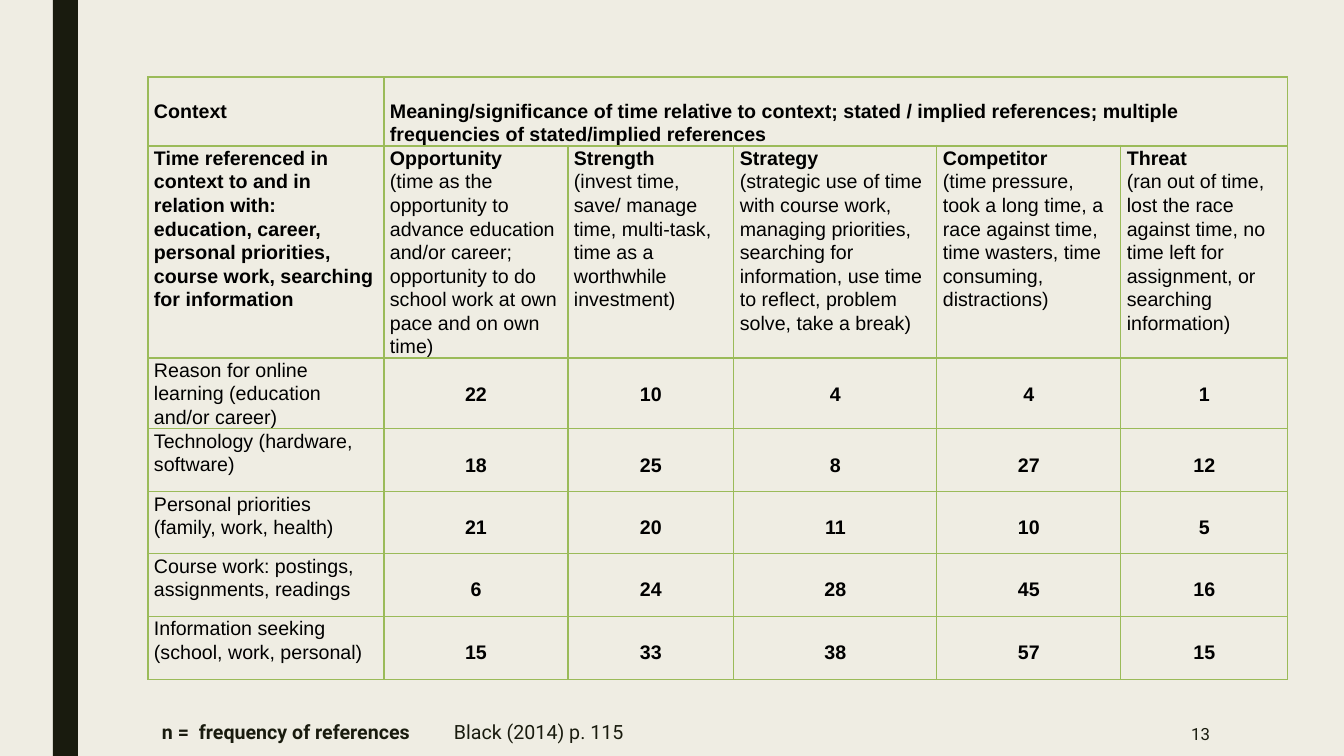
import pptx
import pptx.util
import pptx.dml.color
import pptx.enum.shapes
import pptx.enum.text
import pptx.oxml.ns
from lxml import etree

ALIGN = pptx.enum.text.PP_ALIGN
qn = pptx.oxml.ns.qn
INK = "191B0E"
GREEN = "9BBB59"
COLUMNS = [236, 184, 166, 203, 184, 167]
ROWS = [69, 212, 70, 63, 62, 63, 63]
HEADER = [
    "Context",
    "Meaning/significance of time relative to context; stated / implied references; "
    "multiple frequencies of stated/implied references",
]
TOPIC = ("Time referenced in context to and in relation with: education, career, "
         "personal priorities, course work, searching for information")
MEANINGS = [
    ("Opportunity", "(time as the opportunity to advance education and/or career; "
     "opportunity to do school work at own pace and on own time)"),
    ("Strength", "(invest time, save/ manage time, multi-task, time as a worthwhile investment)"),
    ("Strategy", "(strategic use of time with course work, managing priorities, searching for "
     "information, use time to reflect, problem solve, take a break)"),
    ("Competitor", "(time pressure, took a long time, a race against time, time wasters, "
     "time consuming, distractions)"),
    ("Threat", "(ran out of time, lost the race against time, no time left for assignment, "
     "or searching information)"),
]
FREQUENCIES = [
    ("Reason for online learning (education and/or career)", 22, 10, 4, 4, 1),
    ("Technology (hardware, software)", 18, 25, 8, 27, 12),
    ("Personal priorities (family, work, health)", 21, 20, 11, 10, 5),
    ("Course work: postings, assignments, readings", 6, 24, 28, 45, 16),
    ("Information seeking (school, work, personal)", 15, 33, 38, 57, 15),
]


def px(n):
    return pptx.util.Emu(round(n * 12192000 / 1344))


def rgb(value):
    return pptx.dml.color.RGBColor.from_string(value)


def set_font(font, size, name, color, bold=None):
    font.size = pptx.util.Pt(size)
    font.name = name
    font.color.rgb = rgb(color)
    font.bold = bold


def set_borders(cell, top, bottom):
    tcPr = cell._tc.get_or_add_tcPr()
    for side, width in (("L", 1), ("R", 1), ("T", top), ("B", bottom)):
        ln = etree.SubElement(tcPr, qn(f"a:ln{side}"), w=str(pptx.util.Pt(width)))
        fill = etree.SubElement(ln, qn("a:solidFill"))
        etree.SubElement(fill, qn("a:srgbClr"), val=GREEN)


def fill_cell(cell, lines, top=0, align=ALIGN.LEFT):
    cell.margin_left = cell.margin_right = px(6)
    cell.margin_top = px(top)
    cell.margin_bottom = 0
    tf = cell.text_frame
    for i, (text, bold) in enumerate(lines):
        p = tf.add_paragraph() if i else tf.paragraphs[0]
        p.text = text
        p.alignment = align
        p.line_spacing = 1.07
        set_font(p.font, 14, "Arial", "000000", bold)


def add_frequency_table(s, x, y):
    frame = s.shapes.add_table(len(ROWS), len(COLUMNS), px(x), px(y),
                               px(sum(COLUMNS)), px(sum(ROWS)))
    table = frame.table
    table.first_row = table.horz_banding = False
    for column, width in zip(table.columns, COLUMNS):
        column.width = px(width)
    for row, height in zip(table.rows, ROWS):
        row.height = px(height)
    for r in range(len(ROWS)):
        for c in range(len(COLUMNS)):
            cell = table.cell(r, c)
            set_borders(cell, 2.25 if r == 1 else 1, 2.25 if r == 0 else 1)
            cell.fill.background()
    table.cell(0, 1).merge(table.cell(0, len(COLUMNS) - 1))
    for c, text in enumerate(HEADER):
        fill_cell(table.cell(0, c), [(text, True)], 22)
    fill_cell(table.cell(1, 0), [(TOPIC, True)])
    for c, (term, detail) in enumerate(MEANINGS, 1):
        fill_cell(table.cell(1, c), [(term, True), (detail, False)])
    for r, (context, *counts) in enumerate(FREQUENCIES, 2):
        fill_cell(table.cell(r, 0), [(context, False)])
        for c, count in enumerate(counts, 1):
            fill_cell(table.cell(r, c), [(str(count), True)], 24, ALIGN.CENTER)


def add_side_bar(s, x, y, w, h):
    sp = s.shapes.add_shape(pptx.enum.shapes.MSO_SHAPE.RECTANGLE, px(x), px(y), px(w), px(h))
    sp.shadow.inherit = False
    sp.fill.solid()
    sp.fill.fore_color.rgb = rgb(INK)
    sp.line.fill.background()


def add_text(s, x, y, w, h, size, runs, align=ALIGN.LEFT, inset=9):
    tf = s.shapes.add_textbox(px(x), px(y), px(w), px(h)).text_frame
    tf.word_wrap = True
    tf.vertical_anchor = pptx.enum.text.MSO_ANCHOR.MIDDLE
    tf.margin_left = px(inset)
    p = tf.paragraphs[0]
    p.alignment = align
    set_font(p.font, size, "Roboto", INK)
    for text, bold in runs:
        r = p.add_run()
        r.text = text
        r.font.bold = bold
    return p


def add_footer(s, x, y, w, h):
    p = add_text(s, x, y, w, h, 14,
                 [("n =  frequency of references\t", True), ("Black (2014) p. 115", False)],
                 inset=14)
    tabs = etree.Element(qn("a:tabLst"))
    etree.SubElement(tabs, qn("a:tab"), pos=str(px(292)), algn="l")
    p._p.get_or_add_pPr().insert(0, tabs)
    add_text(s, x + 896, y + 2, 176, h, 12, [("13", False)], ALIGN.RIGHT)


def main():
    prs = pptx.Presentation()
    prs.slide_width, prs.slide_height = px(1344), px(756)
    s = prs.slides.add_slide(prs.slide_layouts[6])
    s.background.fill.solid()
    s.background.fill.fore_color.rgb = rgb("EFEDE3")
    add_side_bar(s, 53, 0, 25, 756)
    add_frequency_table(s, 148, 77)
    add_footer(s, 148, 710, 692, 44)
    prs.save("out.pptx")


if __name__ == "__main__":
    main()
